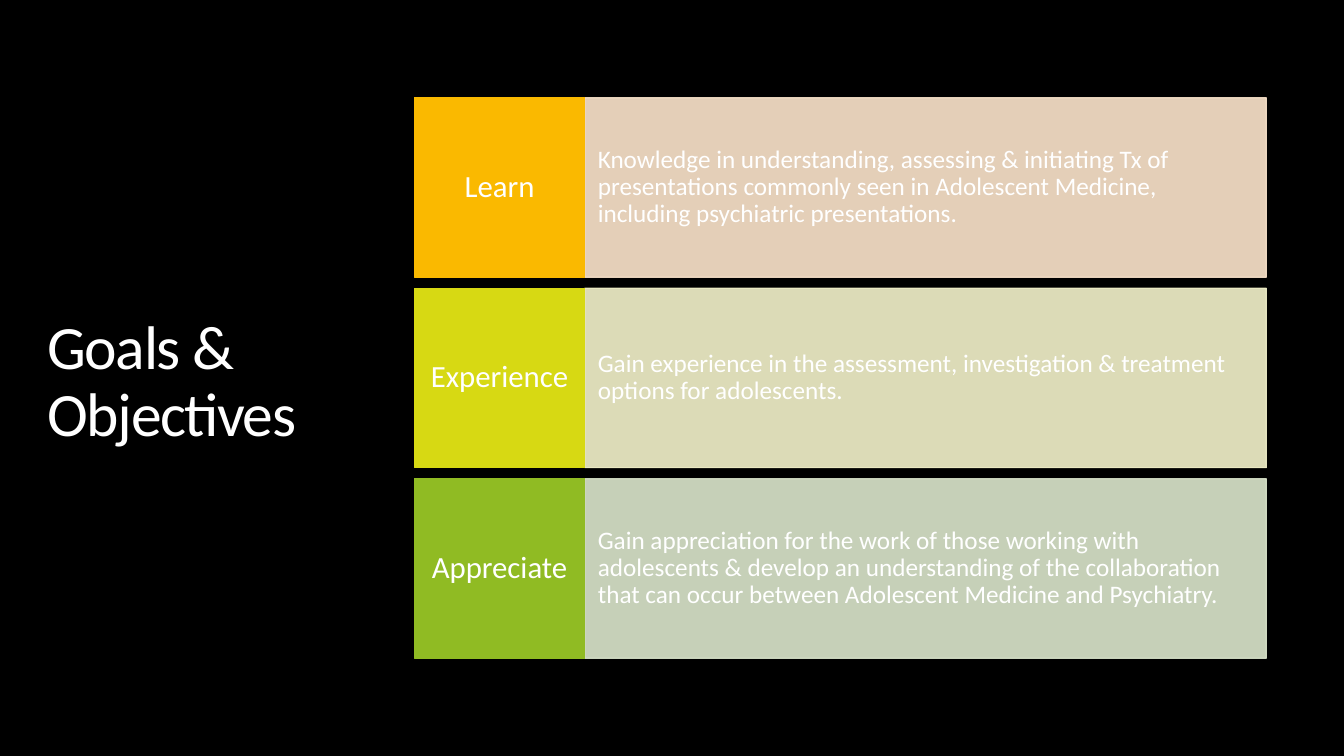
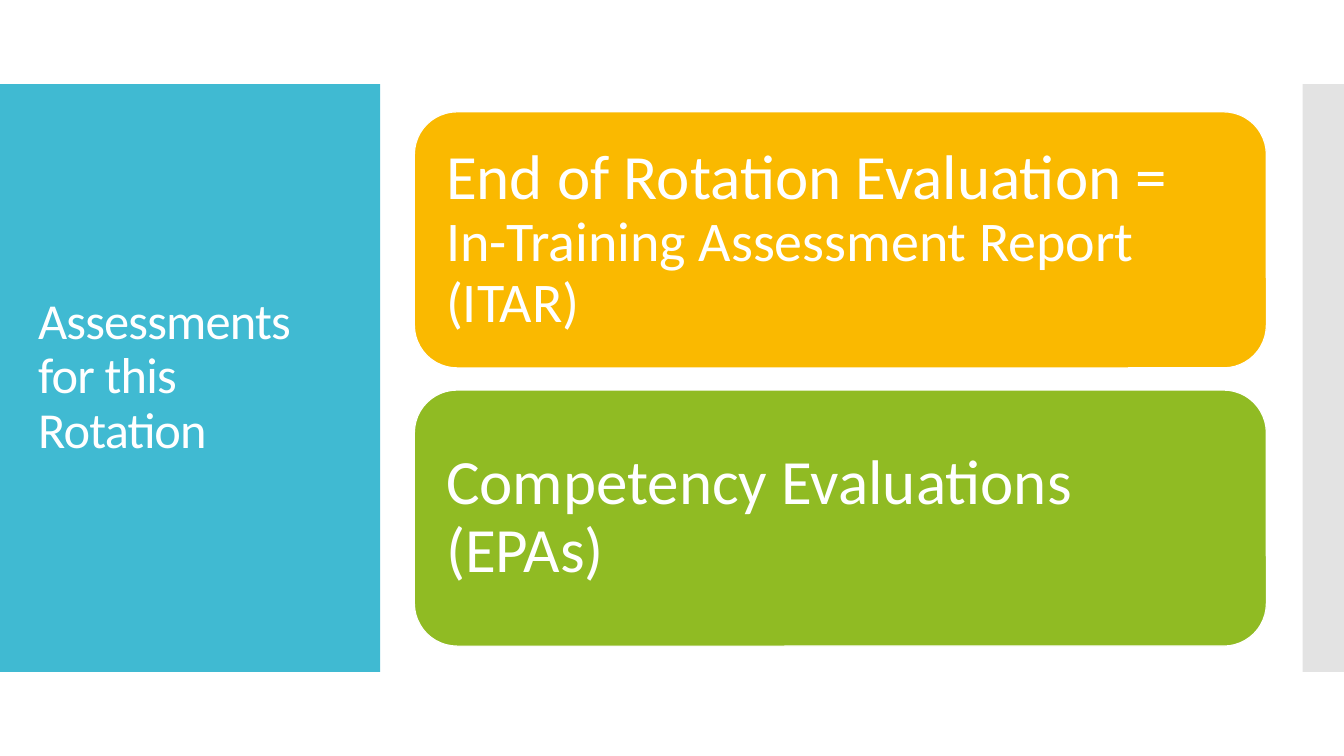
from pptx import Presentation
from pptx.dml.color import RGBColor
from pptx.enum.shapes import MSO_SHAPE
from pptx.enum.text import MSO_ANCHOR, PP_ALIGN
from pptx.oxml.ns import qn
from pptx.util import Inches, Pt
from lxml.etree import SubElement

FONT = "Calibri"
BLACK = RGBColor(0x00, 0x00, 0x00)
WHITE = RGBColor(0xFF, 0xFF, 0xFF)
TEAL = RGBColor(0x40, 0xBA, 0xD2)
GREY = RGBColor(0xC8, 0xC8, 0xC8)
AMBER = RGBColor(0xFA, 0xB9, 0x00)
LIME = RGBColor(0xD7, 0xD9, 0x13)
GREEN = RGBColor(0x90, 0xBB, 0x23)
PALE_AMBER = RGBColor(0xFD, 0xE6, 0xCC)
PALE_LIME = RGBColor(0xF4, 0xF3, 0xCB)
PALE_GREEN = RGBColor(0xDC, 0xE7, 0xCD)

SLIDE_W, SLIDE_H = 13.33, 7.5
BAND_TOP, BAND_H = SLIDE_H / 9, SLIDE_H * 7 / 9
LEFT, WIDTH = 4.11, 8.45
LABEL_W = WIDTH / 5

GOALS = [
    ("Learn", AMBER, PALE_AMBER,
     "Knowledge in understanding, assessing & initiating Tx of presentations "
     "commonly seen in Adolescent Medicine, including psychiatric presentations."),
    ("Experience", LIME, PALE_LIME,
     "Gain experience in the assessment, investigation & treatment options "
     "for adolescents."),
    ("Appreciate", GREEN, PALE_GREEN,
     "Gain appreciation for the work of those working with adolescents & develop "
     "an understanding of the collaboration that can occur between Adolescent "
     "Medicine and Psychiatry."),
]
ASSESSMENTS = [
    (AMBER, [("End of Rotation Evaluation = ", 45),
             ("In-Training Assessment Report (ITAR)", 40)]),
    (GREEN, [("Competency Evaluations (EPAs)", 45)]),
]


def add_slide(prs, background):
    slide = prs.slides.add_slide(prs.slide_layouts[6])
    slide.background.fill.solid()
    slide.background.fill.fore_color.rgb = background
    return slide


def write(sp, runs, anchor=MSO_ANCHOR.MIDDLE, align=PP_ALIGN.LEFT,
          insets=(0.1, 0.05), tracking=0):
    tf = sp.text_frame
    tf.word_wrap = True
    tf.vertical_anchor = anchor
    tf.margin_left = tf.margin_right = Inches(insets[0])
    tf.margin_top = tf.margin_bottom = Inches(insets[1])
    p = tf.paragraphs[0]
    p.alignment = align
    p.line_spacing = 0.9
    p.font.name = FONT
    p.font.color.rgb = WHITE
    for text, size in runs:
        r = p.add_run()
        r.text = text
        r.font.size = Pt(size)
        if tracking:
            r.font._element.set("spc", str(round(tracking * 100)))


def add_title(slide, text, size, box, anchor, tracking):
    sp = slide.shapes.add_textbox(*map(Inches, box))
    write(sp, [(text, size)], anchor, tracking=tracking)


def add_block(slide, box, fill, line=None, shape=MSO_SHAPE.RECTANGLE, opacity=100):
    sp = slide.shapes.add_shape(shape, *map(Inches, box))
    sp.shadow.inherit = False
    sp.fill.solid()
    sp.fill.fore_color.rgb = fill
    if line is None:
        sp.line.fill.background()
    else:
        sp.line.color.rgb = line
        sp.line.width = Pt(0.85)
    if opacity < 100:
        for color in sp._element.spPr.iter(qn("a:srgbClr")):
            SubElement(color, qn("a:alpha")).set("val", str(opacity * 1000))
    return sp


def add_bands(slide):
    add_block(slide, (0, BAND_TOP, 3.77, BAND_H), TEAL)
    add_block(slide, (12.92, BAND_TOP, SLIDE_W - 12.92, BAND_H), GREY, opacity=50)


def build_goals(prs):
    slide = add_slide(prs, BLACK)
    add_title(slide, "Goals & Objectives", 44, (0.37, 1.81, 3.68, 2.7),
              MSO_ANCHOR.BOTTOM, -1)
    top, height, gap = 0.97, 1.78, 0.11
    for i, (label, color, pale, detail) in enumerate(GOALS):
        y = top + i * (height + gap)
        sp = add_block(slide, (LEFT + LABEL_W, y, WIDTH - LABEL_W, height),
                       pale, pale, opacity=90)
        write(sp, [(detail, 18)], insets=(0.13, 0.45))
        sp = add_block(slide, (LEFT, y, LABEL_W, height), color, color)
        write(sp, [(label, 22)], align=PP_ALIGN.CENTER, insets=(0.09, 0.18))


def build_assessments(prs):
    slide = add_slide(prs, WHITE)
    add_bands(slide)
    add_title(slide, "Assessments for this Rotation", 36, (0.28, 1.23, 3.22, 5.03),
              MSO_ANCHOR.MIDDLE, -0.6)
    top, height, gap = 1.11, 2.54, 0.22
    for i, (color, runs) in enumerate(ASSESSMENTS):
        y = top + i * (height + gap)
        sp = add_block(slide, (LEFT, y, WIDTH, height), color, WHITE,
                       MSO_SHAPE.ROUNDED_RECTANGLE)
        write(sp, runs, insets=(0.19, 0.19))


def main():
    prs = Presentation()
    prs.slide_width, prs.slide_height = Inches(SLIDE_W), Inches(SLIDE_H)
    build_goals(prs)
    build_assessments(prs)
    prs.save("out.pptx")


if __name__ == "__main__":
    main()
